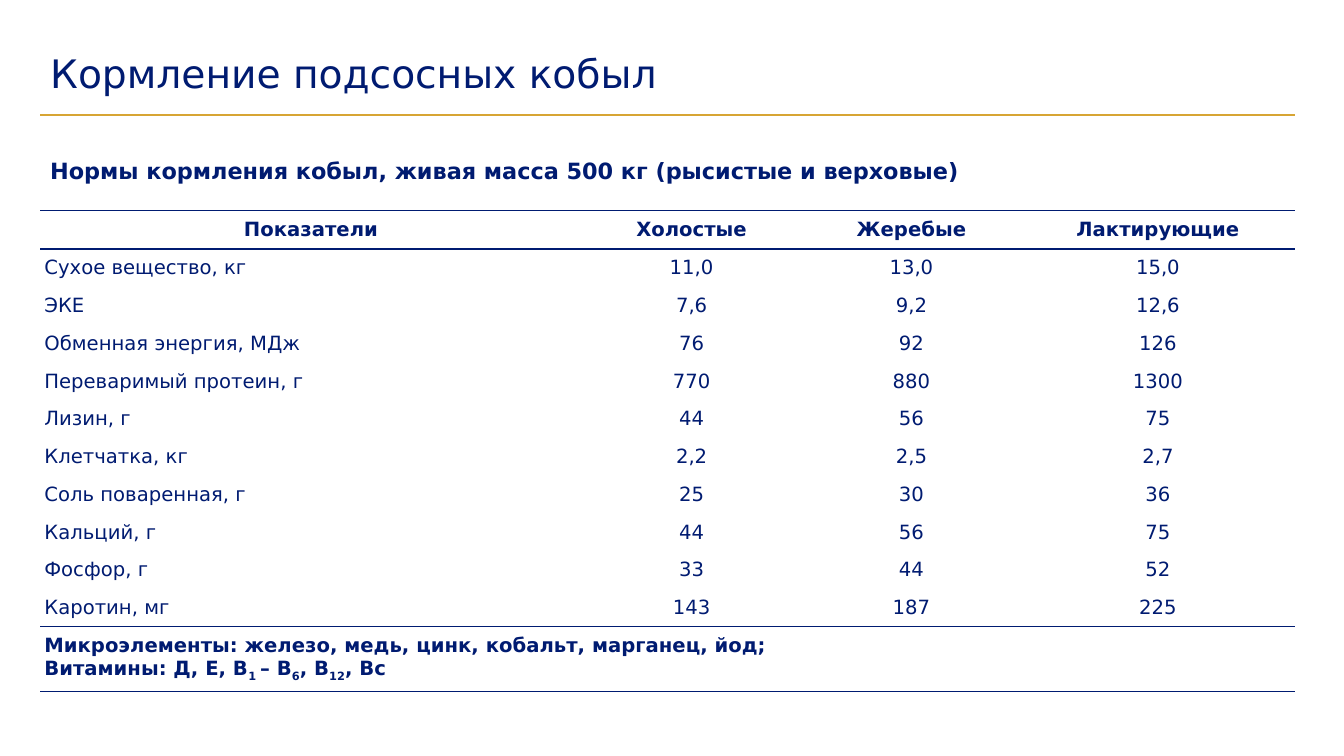
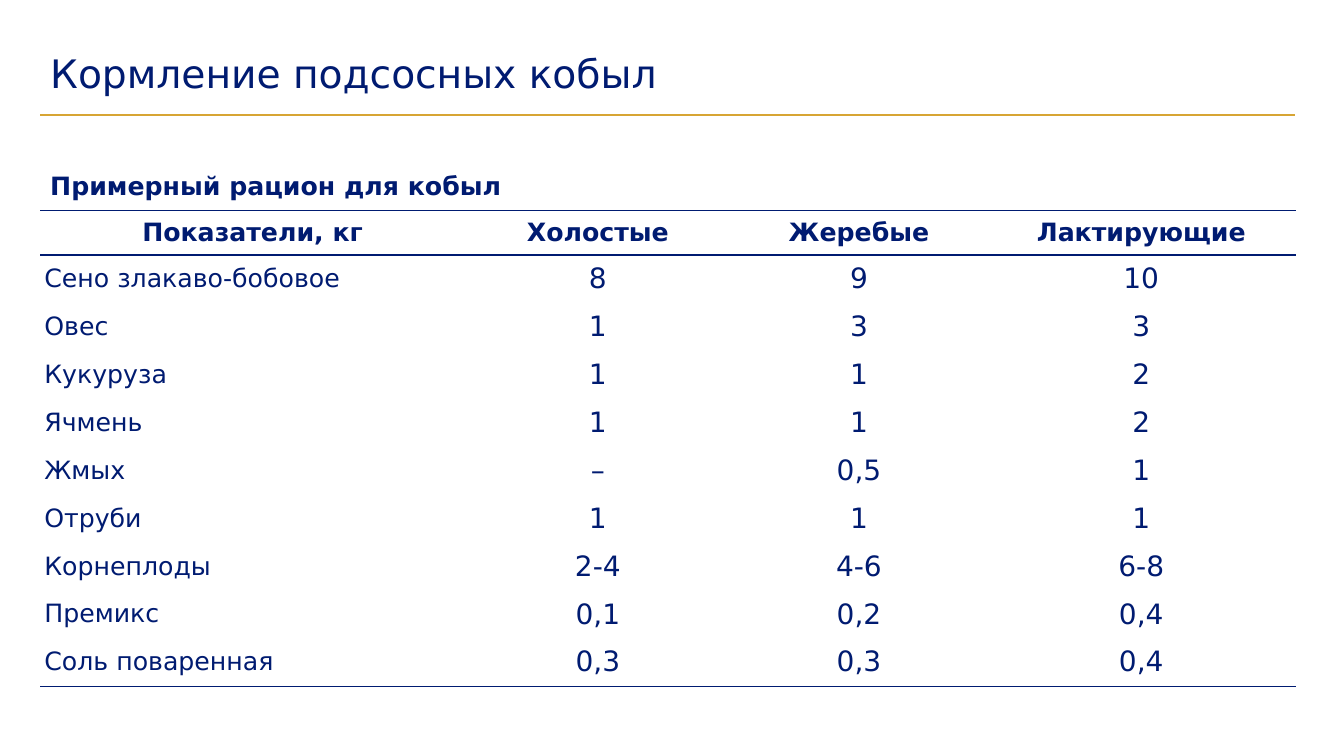
from pptx import Presentation
from pptx.dml.color import RGBColor
from pptx.enum.shapes import MSO_CONNECTOR
from pptx.enum.text import MSO_ANCHOR as Anchor, MSO_AUTO_SIZE as AutoSize, PP_ALIGN as Align
from pptx.oxml import parse_xml
from pptx.oxml.ns import nsdecls, qn
from pptx.oxml.xmlchemy import OxmlElement
from pptx.util import Inches, Pt

THEME = {
    "font": "DejaVu Sans",
    "navy": "001B71",
    "gold": "D7A534",
    "title_size": 28,
    "line_width": Pt(1),
    "plain_table": "{2D5ABB26-0587-4C30-8999-92F81FD0307C}",
}
LEFT, WIDTH = 0.4, 12.44
TABLE_TOP = 2.09
CELL_FORMAT = {
    "margin_left": Inches(0.04),
    "margin_right": Inches(0.04),
    "margin_top": Inches(0.05),
    "margin_bottom": Inches(0.05),
    "vertical_anchor": Anchor.MIDDLE,
}
TITLE = "Кормление подсосных кобыл"
GROUPS = ["Холостые", "Жеребые", "Лактирующие"]

SLIDES = [
    {
        "caption": "Нормы кормления кобыл, живая масса 500 кг (рысистые и верховые)",
        "caption_box": (1.51, 12.44, 0.37),
        "sizes": {"caption": 16, "label": 14, "value": 14},
        "columns": [5.37, 2.18, 2.18, 2.71],
        "heights": {"table": 4.77, "header": 0.38, "footnote": 0.64},
        "rows": [
            ["Показатели", *GROUPS],
            ["Сухое вещество, кг", "11,0", "13,0", "15,0"],
            ["ЭКЕ", "7,6", "9,2", "12,6"],
            ["Обменная энергия, МДж", "76", "92", "126"],
            ["Переваримый протеин, г", "770", "880", "1300"],
            ["Лизин, г", "44", "56", "75"],
            ["Клетчатка, кг", "2,2", "2,5", "2,7"],
            ["Соль поваренная, г", "25", "30", "36"],
            ["Кальций, г", "44", "56", "75"],
            ["Фосфор, г", "33", "44", "52"],
            ["Каротин, мг", "143", "187", "225"],
        ],
        "footnote": [
            "Микроэлементы: железо, медь, цинк, кобальт, марганец, йод;",
            "Витамины: Д, Е, В~1 ~– В~6~, В~12~, Вс",
        ],
    },
    {
        "caption": "Примерный рацион для кобыл",
        "caption_box": (1.64, 9.77, 0.4),
        "sizes": {"caption": 18, "label": 18, "value": 20},
        "columns": [4.21, 2.64, 2.54, 3.06],
        "heights": {"table": 4.72, "header": 0.44, "footnote": 0},
        "rows": [
            ["Показатели, кг", *GROUPS],
            ["Сено злакаво-бобовое", "8", "9", "10"],
            ["Овес", "1", "3", "3"],
            ["Кукуруза", "1", "1", "2"],
            ["Ячмень", "1", "1", "2"],
            ["Жмых", "–", "0,5", "1"],
            ["Отруби", "1", "1", "1"],
            ["Корнеплоды", "2-4", "4-6", "6-8"],
            ["Премикс", "0,1", "0,2", "0,4"],
            ["Соль поваренная", "0,3", "0,3", "0,4"],
        ],
        "footnote": [],
    },
]


def write(frame, lines, size, bold=False, align=Align.LEFT):
    for number, line in enumerate(lines):
        paragraph = frame.add_paragraph() if number else frame.paragraphs[0]
        paragraph.alignment = align
        for position, part in enumerate(line.split("~")):
            run = paragraph.add_run()
            run.text = part
            font_format = {"name": THEME["font"], "size": Pt(size), "bold": bold}
            for key, value in font_format.items():
                setattr(run.font, key, value)
            run.font.color.rgb = RGBColor.from_string(THEME["navy"])
            if position % 2:
                run.font._element.set("baseline", "-25000")


def style_cell(cell, edges):
    for key, value in CELL_FORMAT.items():
        setattr(cell, key, value)
    properties = cell._tc.get_or_add_tcPr()
    for edge in edges:
        properties.append(parse_xml(
            f'<a:ln{edge} {nsdecls("a")} w="{THEME["line_width"]}"><a:solidFill>'
            f'<a:srgbClr val="{THEME["navy"]}"/></a:solidFill></a:ln{edge}>'
        ))
    cell.fill.background()


deck = Presentation()
deck.slide_width, deck.slide_height = Inches(13.33), Inches(7.5)

for content in SLIDES:
    slide = deck.slides.add_slide(deck.slide_layouts[6])
    sizes, heights = content["sizes"], content["heights"]
    rows, footnote = content["rows"], content["footnote"]

    title_rule = slide.shapes.add_connector(
        MSO_CONNECTOR.STRAIGHT, Inches(LEFT), Inches(1.14), Inches(LEFT + WIDTH), Inches(1.14))
    title_rule.line.color.rgb = RGBColor.from_string(THEME["gold"])
    title_rule.line.width = THEME["line_width"]
    title_rule._element.spPr.append(OxmlElement("a:effectLst"))

    title = slide.shapes.add_textbox(
        Inches(LEFT), Inches(0.45), Inches(WIDTH), Inches(0.6)).text_frame
    title.word_wrap = True
    title.vertical_anchor = Anchor.MIDDLE
    write(title, [TITLE], THEME["title_size"])
    title.paragraphs[0].line_spacing = 0.9

    row_count = len(rows) + bool(footnote)
    norms = slide.shapes.add_table(
        row_count, len(content["columns"]), Inches(LEFT), Inches(TABLE_TOP),
        Inches(WIDTH), Inches(heights["table"])).table
    norms.first_row = norms.horz_banding = False
    norms._tbl.tblPr.find(qn("a:tableStyleId")).text = THEME["plain_table"]
    for column, width in zip(norms.columns, content["columns"]):
        column.width = Inches(width)

    body_height = (heights["table"] - heights["header"] - heights["footnote"]) / (len(rows) - 1)
    for row in norms.rows:
        row.height = Inches(body_height)
    norms.rows[0].height = Inches(heights["header"])

    for r, values in enumerate(rows):
        header = r == 0
        edges = "TB" if header else "B" if r == row_count - 1 else ""
        for c, value in enumerate(values):
            cell = norms.cell(r, c)
            style_cell(cell, edges)
            size = sizes["label"] if header or c == 0 else sizes["value"]
            align = Align.CENTER if header or c else Align.LEFT
            write(cell.text_frame, [value], size, header, align)

    if footnote:
        last = row_count - 1
        norms.rows[last].height = Inches(heights["footnote"])
        for cell in norms.rows[last].cells:
            style_cell(cell, "TB")
        norms.cell(last, 0).merge(norms.cell(last, len(norms.columns) - 1))
        write(norms.cell(last, 0).text_frame, footnote, sizes["label"], True)

    top, width, height = content["caption_box"]
    caption = slide.shapes.add_textbox(
        Inches(LEFT), Inches(top), Inches(width), Inches(height)).text_frame
    caption.word_wrap = True
    caption.auto_size = AutoSize.SHAPE_TO_FIT_TEXT
    write(caption, [content["caption"]], sizes["caption"], True)

deck.save("out.pptx")
